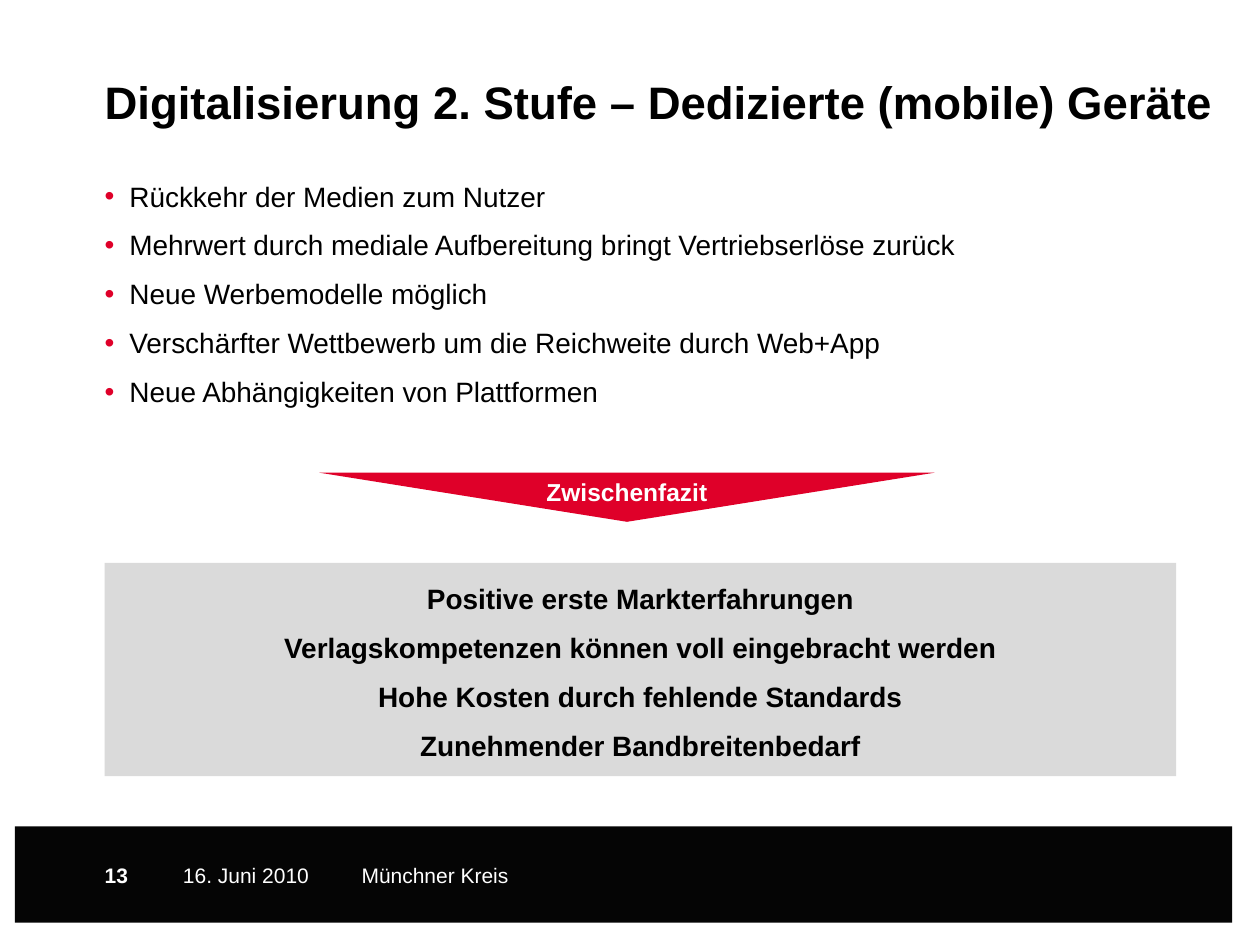
import pptx
import pptx.util
import pptx.dml.color
import pptx.enum.shapes
import pptx.enum.text
import lxml.etree

Cm = pptx.util.Cm
Pt = pptx.util.Pt
KIND = pptx.enum.shapes.MSO_SHAPE
ALIGN = pptx.enum.text.PP_ALIGN
BLACK, WHITE, RED, GREY = "000000", "FFFFFF", "DF0029", "DADADA"
EDGE = 2.11  # common left edge of the content
GAP = 8.8    # points between list lines


def color(hue):
    return pptx.dml.color.RGBColor.from_string(hue)


def block(slide, kind, box, hue):
    """Plain filled shape without line or shadow."""
    shape = slide.shapes.add_shape(kind, *map(Cm, box))
    shape.shadow.inherit = False
    shape.fill.solid()
    shape.fill.fore_color.rgb = color(hue)
    shape.line.fill.background()
    return shape


def bullet(para, hue):
    """Hanging dot in the given colour."""
    props = para._p.get_or_add_pPr()
    props.set("marL", str(Cm(0.5)))
    props.set("indent", str(-Cm(0.5)))
    tag = pptx.oxml.ns.qn
    tint = lxml.etree.SubElement(props, tag("a:buClr"))
    lxml.etree.SubElement(tint, tag("a:srgbClr"), val=hue)
    lxml.etree.SubElement(props, tag("a:buFont"), typeface="Arial")
    lxml.etree.SubElement(props, tag("a:buChar"), char="•")


def text(slide, box, lines, size, hue=BLACK, bold=False,
         align=ALIGN.LEFT, dot=None):
    """Text box without margins, one paragraph for each line."""
    frame = slide.shapes.add_textbox(*map(Cm, box)).text_frame
    frame.word_wrap = True
    frame.margin_left = frame.margin_right = 0
    frame.margin_top = frame.margin_bottom = 0
    for pos, line in enumerate(lines):
        para = frame.paragraphs[0] if pos == 0 else frame.add_paragraph()
        para.alignment = align
        if pos:
            para.space_before = Pt(GAP)
        if dot:
            bullet(para, dot)
        run = para.add_run()
        run.text = line
        run.font.name = "Arial"
        run.font.size = Pt(size)
        run.font.bold = bold
        run.font.color.rgb = color(hue)


def arrow(slide, box, label):
    """Flat arrow head with a centred label."""
    left, top, width, height = box
    head = block(slide, KIND.DOWN_ARROW, box, RED)
    head.adjustments[0] = 0.5
    head.adjustments[1] = 1
    text(slide, (left, top + 0.08, width, height - 0.38), [label], 14,
         WHITE, True, ALIGN.CENTER)


def panel(slide, box, lines):
    """Grey box with centred bold lines."""
    left, top, width, height = box
    block(slide, KIND.RECTANGLE, box, GREY)
    text(slide, (left, top + 0.38, width, height - 0.38), lines, 16,
         bold=True, align=ALIGN.CENTER)


def footer(slide, box, parts):
    """Black bar; each part has offset, width, wording and weight."""
    left, top = box[:2]
    block(slide, KIND.RECTANGLE, box, "050505")
    for shift, width, words, bold in parts:
        text(slide, (left + shift, top + 0.72, width, 0.79), [words], 12,
             WHITE, bold)


def main():
    deck = pptx.Presentation()
    deck.slide_width, deck.slide_height = Cm(25.4), Cm(19.05)
    slide = deck.slides.add_slide(deck.slide_layouts[6])

    # Footer
    footer(slide, (0.3, 16.66, 24.54, 1.94), [
        (1.81, 1.5, "13", True),
        (3.39, 3.6, "16. Juni 2010", False),
        (6.99, 11.2, "Münchner Kreis", False),
    ])

    # Title and bullet list
    text(slide, (EDGE, 1.5, 22.6, 2.1),
         ["Digitalisierung 2. Stufe – Dedizierte (mobile) Geräte"], 26,
         bold=True)
    text(slide, (EDGE, 3.61, 21.6, 6), [
        "Rückkehr der Medien zum Nutzer",
        "Mehrwert durch mediale Aufbereitung bringt Vertriebserlöse zurück",
        "Neue Werbemodelle möglich",
        "Verschärfter Wettbewerb um die Reichweite durch Web+App",
        "Neue Abhängigkeiten von Plattformen",
    ], 16, dot=RED)

    # Interim conclusion
    arrow(slide, (6.44, 9.53, 12.4, 0.99), "Zwischenfazit")
    panel(slide, (EDGE, 11.35, 21.6, 4.3), [
        "Positive erste Markterfahrungen",
        "Verlagskompetenzen können voll eingebracht werden",
        "Hohe Kosten durch fehlende Standards",
        "Zunehmender Bandbreitenbedarf",
    ])

    deck.save("out.pptx")


if __name__ == "__main__":
    main()
